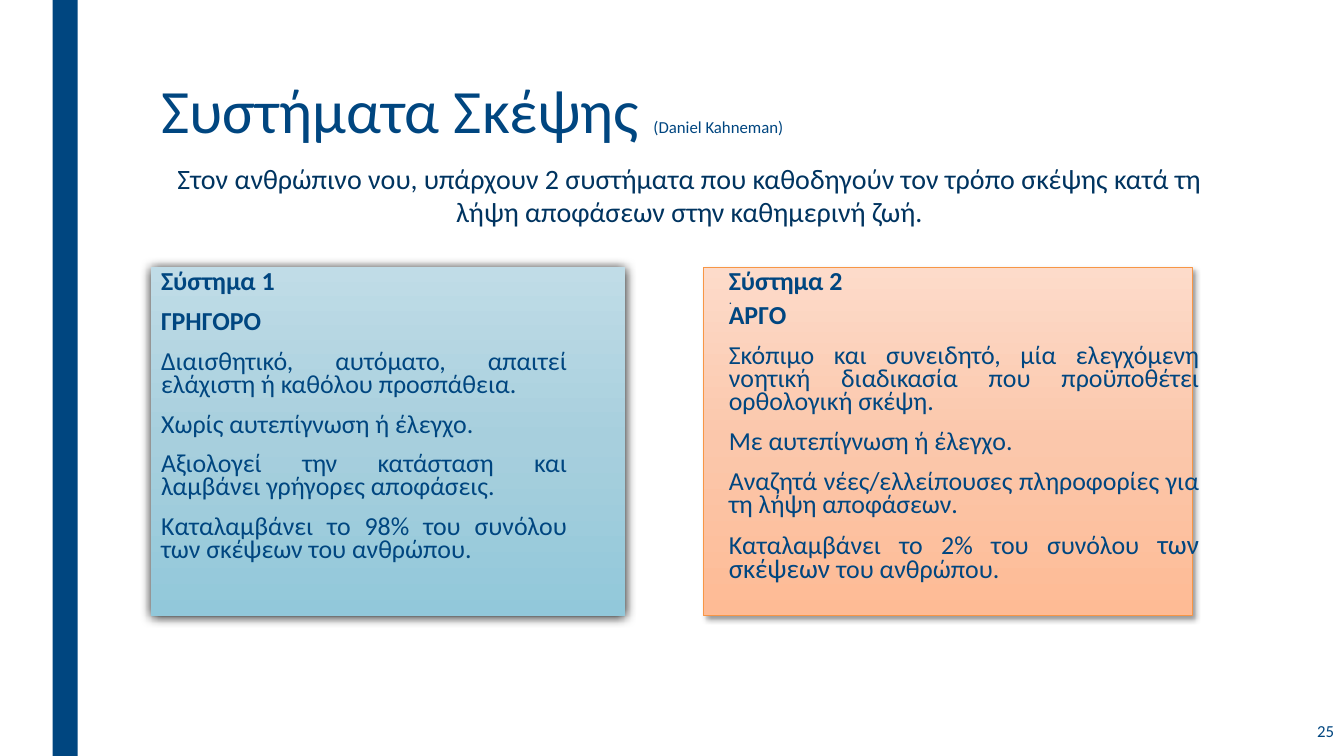
from copy import deepcopy
from pptx import Presentation
from pptx.dml.color import RGBColor
from pptx.enum.shapes import MSO_SHAPE
from pptx.enum.text import MSO_ANCHOR, PP_ALIGN
from pptx.oxml import parse_xml
from pptx.oxml.ns import nsdecls, qn
from pptx.util import Pt

# Content: a paragraph is a list of (text, run format) pairs; "\n" breaks the line
NAVY, DARK = "004680", "003460"
BODY = {"size": 18.5}
HEAD = {"size": 18.5, "bold": True}
TITLE = [("Συστήματα Σκέψης ", {"size": 44}), ("(Daniel Kahneman)", {"size": 12})]
INTRO = [("Στον ανθρώπινο νου, υπάρχουν 2 συστήματα που καθοδηγούν τον τρόπο "
          "σκέψης κατά τη λήψη αποφάσεων στην καθημερινή ζωή.",
          {"size": 20, "color": DARK})]
NUMBER = [("25", {"size": 12})]
SYSTEMS = [
    {"card": (108, 338.5), "text": (108, 304), "line": None,
     "stops": ["C0DCE7", "A7CFDD", "92C8DA"],
     "shadow": {"alpha": 100, "blur": 8.5, "dist": 1, "angle": 90},
     "heads": [[("Σύστημα 1", HEAD)], [("ΓΡΗΓΟΡΟ", HEAD)]],
     "points": [
         [("Διαισθητικό, αυτόματο, απαιτεί ελάχιστη ή καθόλου προσπάθεια.", BODY)],
         [("Χωρίς αυτεπίγνωση ή έλεγχο.", BODY)],
         [("Αξιολογεί την κατάσταση και λαμβάνει γρήγορες αποφάσεις.", BODY)],
         [("Καταλαμβάνει το 98% του συνόλου των σκέψεων του ανθρώπου.", BODY)]]},
    {"card": (502.5, 349), "text": (513.5, 350), "line": "F79646",
     "stops": ["FDDBCA", "FBC7AB", "FEBB95"],
     "shadow": {"alpha": 40, "blur": 4, "dist": 3, "angle": 45},
     "heads": [[("Σύστημα 2\n", HEAD), (".\n", {"size": 9.2}), ("ΑΡΓΟ", HEAD)]],
     "points": [
         [("Σκόπιμο και συνειδητό, μία ελεγχόμενη νοητική διαδικασία που "
           "προϋποθέτει ορθολογική σκέψη.", BODY)],
         [("Με αυτεπίγνωση ή έλεγχο.", BODY)],
         [("Αναζητά νέες/ελλείπουσες πληροφορίες για τη λήψη αποφάσεων.", BODY)],
         [("Καταλαμβάνει το 2% του συνόλου ", BODY),
          ("των σκέψεων ", {"size": 19.4}), ("του ανθρώπου.", BODY)]]},
]
CARD_TOP, CARD_H = 190.8, 249


def rgb(value):
    return RGBColor.from_string(value)


def add_rect(left, top, width, height):
    sp = slide.shapes.add_shape(MSO_SHAPE.RECTANGLE, Pt(left), Pt(top), Pt(width), Pt(height))
    sp.shadow.inherit = False
    sp.line.fill.background()
    return sp


def add_gradient(sp, colors):
    sp.fill.gradient()
    sp.fill.gradient_angle = 270
    stops = sp._element.spPr.find(qn("a:gradFill")).find(qn("a:gsLst"))
    while len(stops) < len(colors):
        stops.append(deepcopy(stops[0]))
    for i, (stop, color) in enumerate(zip(sp.fill.gradient_stops, colors)):
        stop.position = i / (len(colors) - 1)
        stop.color.rgb = rgb(color)


def add_shadow(sp, alpha, blur, dist, angle):
    sp._element.spPr.find(qn("a:effectLst")).append(parse_xml(
        f'<a:outerShdw {nsdecls("a")} blurRad="{Pt(blur)}" dist="{Pt(dist)}" '
        f'dir="{angle * 60000}" algn="ctr" rotWithShape="0"><a:srgbClr val="000000">'
        f'<a:alpha val="{alpha * 1000}"/></a:srgbClr></a:outerShdw>'))


def add_text(box, paragraphs, anchor=MSO_ANCHOR.TOP):
    """Each paragraph is a (runs, paragraph format) pair."""
    tf = slide.shapes.add_textbox(*map(Pt, box)).text_frame
    tf.word_wrap = True
    tf.vertical_anchor = anchor
    for i, (runs, layout) in enumerate(paragraphs):
        p = tf.add_paragraph() if i else tf.paragraphs[0]
        for name, value in layout.items():
            setattr(p, name, value)
        if i == 0:
            p.space_before = Pt(0)
        for text, style in runs:
            r = p.add_run()
            r.text = text.rstrip("\n")
            r.font.name = "Calibri"
            r.font.color.rgb = rgb(style.get("color", NAVY))
            r.font.size = Pt(style["size"])
            r.font.bold = style.get("bold", False)
            if text.endswith("\n"):
                p.add_line_break()


prs = Presentation()
prs.slide_width, prs.slide_height = Pt(960), Pt(540)
slide = prs.slides.add_slide(prs.slide_layouts[6])

# Side band
band = add_rect(37.5, 0, 18, 540)
band.fill.solid()
band.fill.fore_color.rgb = rgb(NAVY)

# Title and introduction
add_text((108, 54, 756, 60), [(TITLE, {"line_spacing": 0.89})])
add_text((108, 111.6, 769, 55.4), [(INTRO, {"alignment": PP_ALIGN.CENTER})])

# Cards with their text
spaced = {"line_spacing": 0.74, "space_before": Pt(10), "space_after": Pt(2)}
justified = {**spaced, "alignment": PP_ALIGN.JUSTIFY}
for system in SYSTEMS:
    left, width = system["card"]
    card = add_rect(left, CARD_TOP, width, CARD_H)
    add_gradient(card, system["stops"])
    add_shadow(card, **system["shadow"])
    if system["line"]:
        card.line.color.rgb = rgb(system["line"])
        card.line.width = Pt(0.5)
    left, width = system["text"]
    add_text((left, CARD_TOP, width, CARD_H),
             [(runs, spaced) for runs in system["heads"]]
             + [(runs, justified) for runs in system["points"]])

# Slide number
add_text((834, 506, 126, 32), [(NUMBER, {"alignment": PP_ALIGN.RIGHT})], MSO_ANCHOR.MIDDLE)

prs.save("out.pptx")
